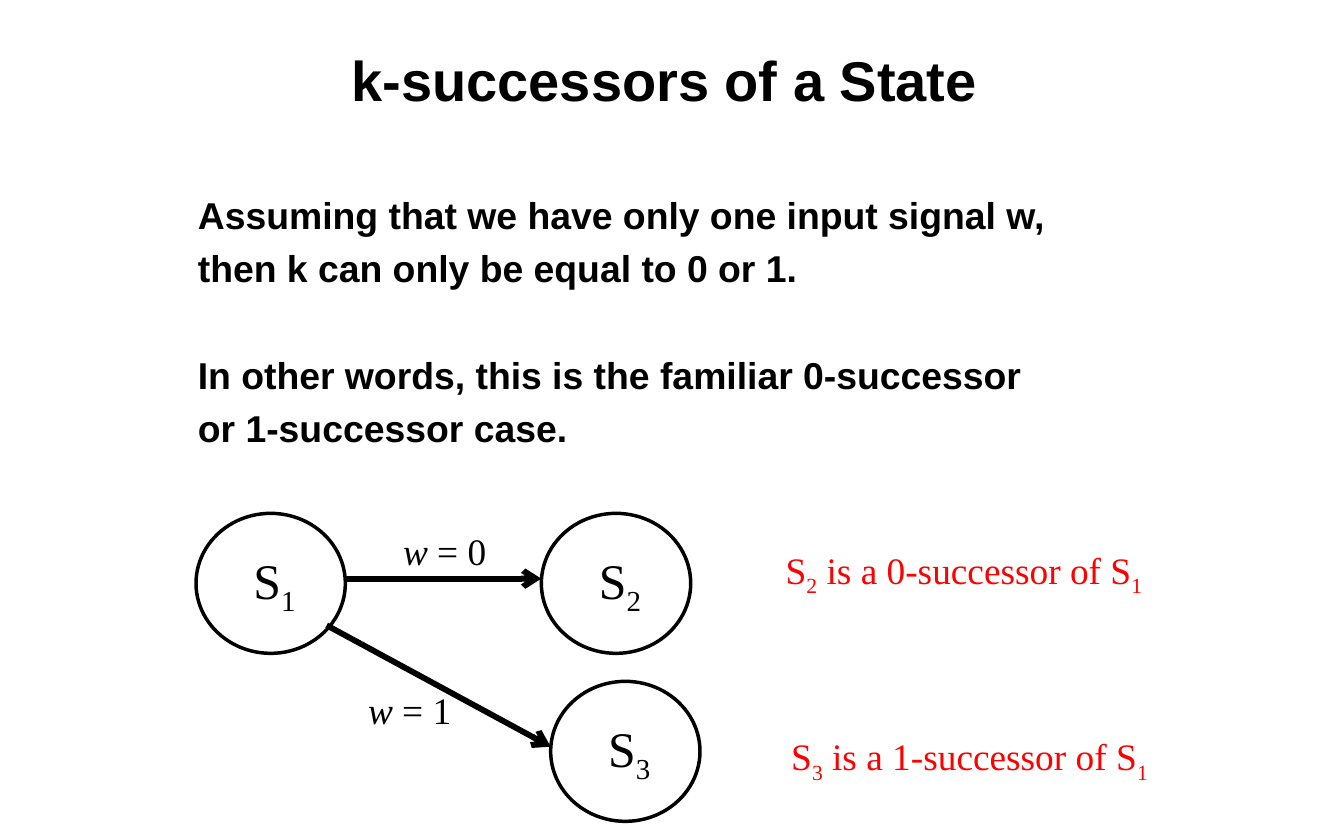
"""Build the slide on the k-successors of a state."""
import dataclasses
import typing

import pptx
import pptx.dml.color
import pptx.enum.shapes
import pptx.enum.text
import pptx.oxml
import pptx.oxml.ns
import pptx.shapes.base
import pptx.slide
import pptx.text.text
import pptx.util

BLACK = pptx.dml.color.RGBColor(0x00, 0x00, 0x00)
WHITE = pptx.dml.color.RGBColor(0xFF, 0xFF, 0xFF)
RED = pptx.dml.color.RGBColor(0xFF, 0x00, 0x00)

WIDE, HIGH = pptx.util.Inches(12), pptx.util.Inches(7.5)
COLS, ROWS = 144, 90
NODE_W, NODE_H = 16, 15

Pt = pptx.util.Pt
Align = pptx.enum.text.PP_ALIGN
Mid = pptx.enum.text.MSO_ANCHOR.MIDDLE
Fit = pptx.enum.text.MSO_AUTO_SIZE

HEAD = {"name": "Arial", "size": Pt(36), "bold": True}
BODY = {"name": "Arial", "size": Pt(24), "bold": True}
NOTE = {"name": "Times New Roman", "size": Pt(24)}
STATE = {"name": "Times New Roman", "size": Pt(32)}
LINE_GAP, GROUP_GAP = Pt(5.5), Pt(39.5)


@dataclasses.dataclass
class Node:
    """A state, placed by its left column and top row."""
    num: str
    col: float
    row: float


@dataclasses.dataclass
class Edge:
    """An arrow between two points of the grid."""
    start: tuple[float, float]
    end: tuple[float, float]


@dataclasses.dataclass
class Piece:
    """A piece of text with its own slant or base line."""
    text: str
    sub: bool = False
    slant: bool = False


@dataclasses.dataclass
class Label:
    """A one-line text, placed by column, row and width."""
    col: float
    row: float
    wide: float
    words: list[Piece]
    tint: pptx.dml.color.RGBColor = BLACK


def get_x(col: float) -> int:
    """Turn columns into a length."""
    return round(WIDE * col / COLS)


def get_y(row: float) -> int:
    """Turn rows into a length."""
    return round(HIGH * row / ROWS)


def style(thing: typing.Any, form: dict[str, typing.Any]) -> None:
    """Set each format value on the thing."""
    for name, value in form.items():
        setattr(thing, name, value)


def place(shape: pptx.shapes.base.BaseShape, col: float, row: float,
          wide: float, high: float) -> None:
    """Move a shape to its cell of the grid."""
    style(shape, {"left": get_x(col), "top": get_y(row),
                  "width": get_x(wide), "height": get_y(high)})


def add_words(para: pptx.text.text._Paragraph, words: list[Piece],
              form: dict[str, typing.Any],
              tint: pptx.dml.color.RGBColor = BLACK) -> None:
    """Write the pieces as runs of one paragraph."""
    for piece in words:
        run = para.add_run()
        run.text = piece.text
        style(run.font, form)
        run.font.color.rgb = tint
        if piece.slant:
            run.font.italic = True
        if piece.sub:
            run._r.get_or_add_rPr().set("baseline", "-25000")


def add_title(slide: pptx.slide.Slide, text: str) -> None:
    """Fill the title placeholder."""
    title = slide.shapes.title
    place(title, 0, 4, COLS, 9)
    style(title.text_frame, {"vertical_anchor": Mid, "auto_size": Fit.NONE})
    para = title.text_frame.paragraphs[0]
    para.alignment = Align.CENTER
    add_words(para, [Piece(text)], HEAD)


def add_body(slide: pptx.slide.Slide, groups: list[list[str]]) -> None:
    """Fill the body placeholder with groups of plain lines."""
    body = slide.placeholders[1]
    place(body, 20, 20, 104, 32)
    frame = body.text_frame
    frame.auto_size = Fit.NONE
    para = frame.paragraphs[0]
    for rank, group in enumerate(groups):
        for line, text in enumerate(group):
            if rank or line:
                para = frame.add_paragraph()
            para.space_before = GROUP_GAP if rank and not line else LINE_GAP
            add_words(para, [Piece(text)], BODY)
            props = para._p.get_or_add_pPr()
            props.set("marL", "0")
            props.set("indent", "0")
            props.append(pptx.oxml.parse_xml(
                f"<a:buNone {pptx.oxml.ns.nsdecls('a')}/>"))


def add_node(slide: pptx.slide.Slide, node: Node) -> None:
    """Draw a state as a circle with its name."""
    oval = slide.shapes.add_shape(
        pptx.enum.shapes.MSO_SHAPE.OVAL, get_x(node.col), get_y(node.row),
        get_x(NODE_W), get_y(NODE_H))
    oval.shadow.inherit = False
    oval.fill.solid()
    oval.fill.fore_color.rgb = WHITE
    oval.line.color.rgb = BLACK
    oval.line.width = Pt(2.25)
    style(oval.text_frame, {
        "margin_left": Pt(5), "margin_right": 0, "margin_top": 0,
        "margin_bottom": 0, "vertical_anchor": Mid, "word_wrap": False})
    para = oval.text_frame.paragraphs[0]
    para.alignment = Align.CENTER
    add_words(para, [Piece("S"), Piece(node.num, sub=True)], STATE)


def add_edge(slide: pptx.slide.Slide, edge: Edge) -> None:
    """Draw an arrow from one state to the next."""
    (col, row), (to_col, to_row) = edge.start, edge.end
    arrow = slide.shapes.add_connector(
        pptx.enum.shapes.MSO_CONNECTOR.STRAIGHT, get_x(col), get_y(row),
        get_x(to_col), get_y(to_row))
    arrow.line.color.rgb = BLACK
    arrow.line.width = Pt(3.75)
    space = pptx.oxml.ns.nsdecls("a")
    props = arrow._element.spPr
    props.get_or_add_ln().append(
        pptx.oxml.parse_xml(f'<a:tailEnd {space} type="arrow"/>'))
    props.append(pptx.oxml.parse_xml(f"<a:effectLst {space}/>"))


def add_label(slide: pptx.slide.Slide, label: Label) -> None:
    """Write a label in a text box."""
    box = slide.shapes.add_textbox(get_x(label.col), get_y(label.row),
                                   get_x(label.wide), get_y(6))
    style(box.text_frame, {"word_wrap": False,
                           "auto_size": Fit.SHAPE_TO_FIT_TEXT})
    add_words(box.text_frame.paragraphs[0], label.words, NOTE, label.tint)


def note(num: str, signal: str) -> list[Piece]:
    """Say which successor of the first state a state is."""
    return [Piece("S"), Piece(num, sub=True),
            Piece(f" is a {signal}-successor of S"), Piece("1", sub=True)]


def main() -> None:
    """Build and save the slide."""
    deck = pptx.Presentation()
    style(deck, {"slide_width": WIDE, "slide_height": HIGH})
    slide = deck.slides.add_slide(deck.slide_layouts[1])
    add_title(slide, "k-successors of a State ")
    add_body(slide, [
        ["Assuming that we have only one input signal w,",
         "then k can only be equal to 0 or 1."],
        ["In other words, this is the familiar 0-successor",
         "or 1-successor case."]])
    for node in (Node("1", 21, 55), Node("2", 58, 55), Node("3", 59, 73)):
        add_node(slide, node)
    for edge in (Edge((37, 62), (58, 62)), Edge((35, 67), (59, 80))):
        add_edge(slide, edge)
    for label in (
            Label(42, 56, 11.75, [Piece("w", slant=True), Piece(" = 0")]),
            Label(38.25, 73, 11.75, [Piece("w", slant=True), Piece(" = 1")]),
            Label(83, 58, 42, note("2", "0"), RED),
            Label(83.6, 78, 42, note("3", "1"), RED)):
        add_label(slide, label)
    deck.save("out.pptx")


if __name__ == "__main__":
    main()
